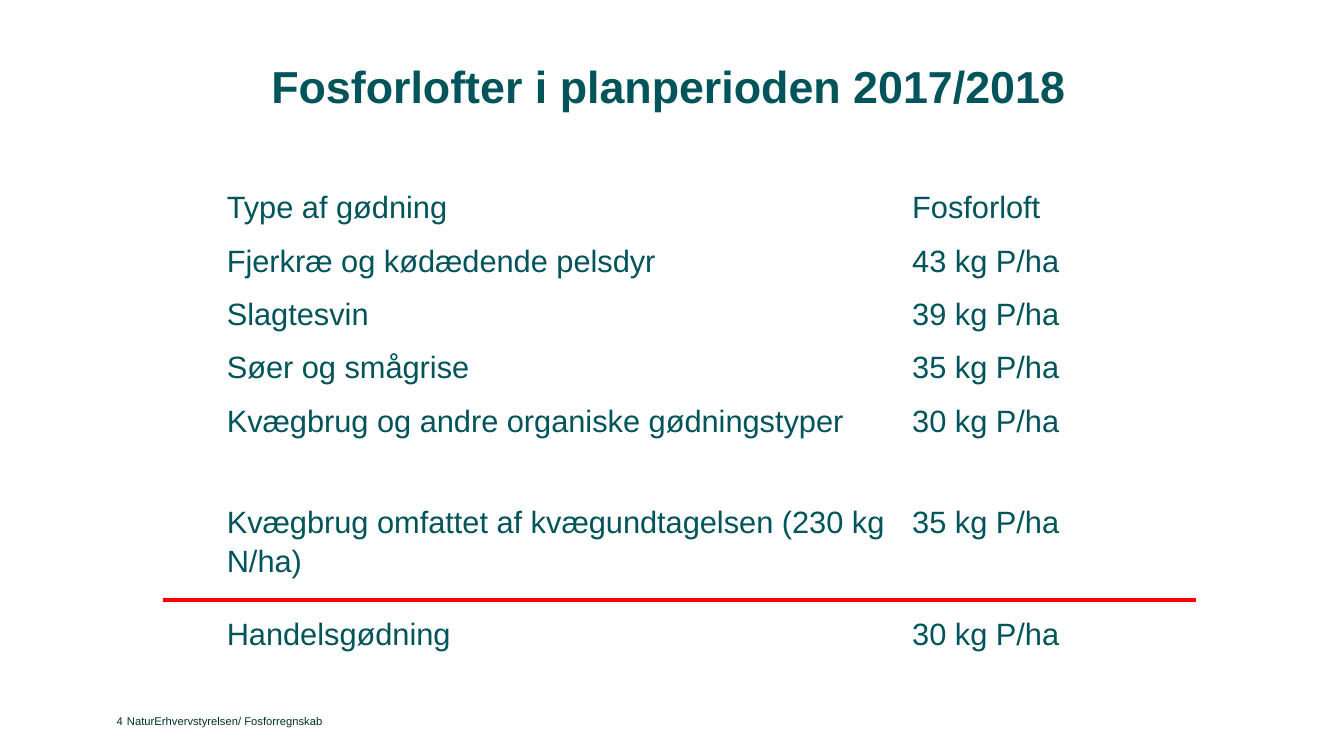
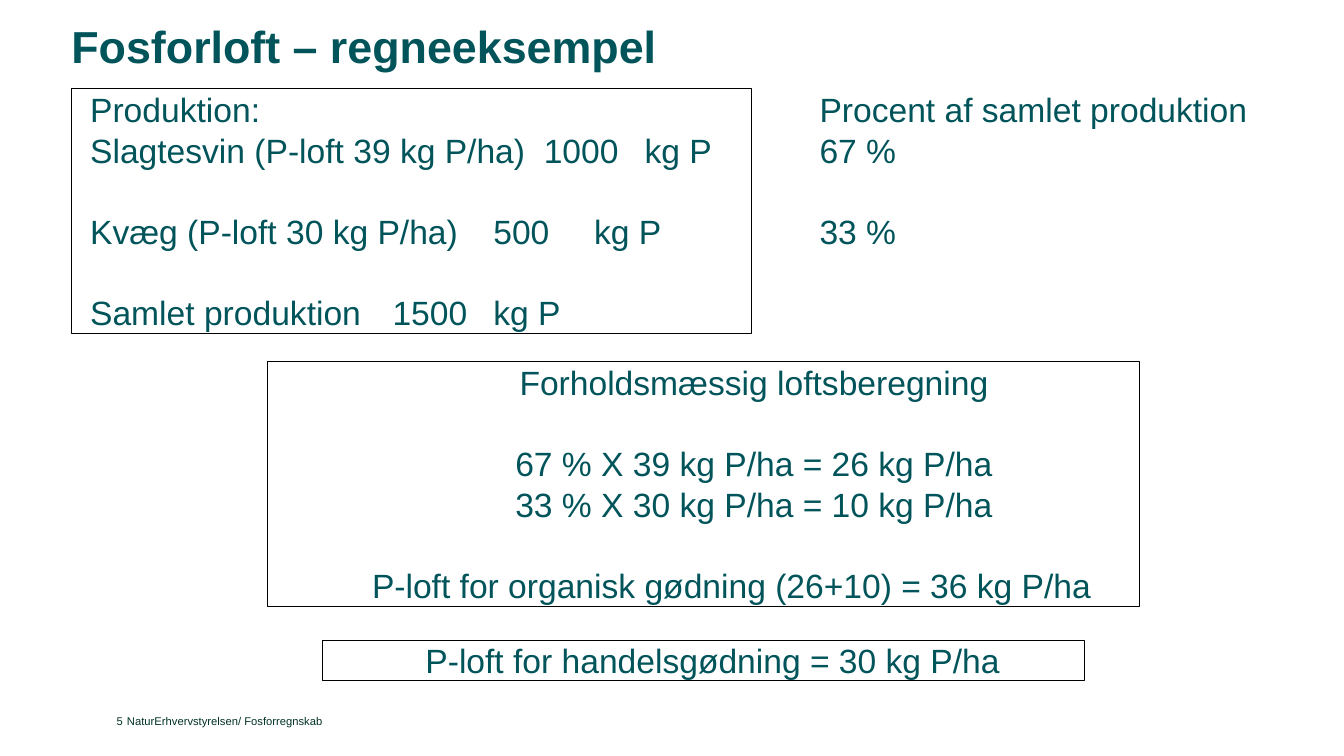
"""Build two slides on phosphorus ceilings: a table and a worked example."""
from lxml.etree import SubElement
from pptx import Presentation
from pptx.dml.color import RGBColor
from pptx.enum.shapes import MSO_CONNECTOR, MSO_SHAPE
from pptx.enum.text import MSO_ANCHOR, PP_ALIGN
from pptx.oxml.ns import qn
from pptx.util import Pt

HUES = {"teal": "00545A", "foot": "003127", "red": "FF0000",
        "black": "000000", "white": "FFFFFF"}
FONT = "Arial"
FOOT = "NaturErhvervstyrelsen/ Fosforregnskab"
LINE = 29

ROWS = [
    ("Type af gødning", "Fosforloft"),
    ("Fjerkræ og kødædende pelsdyr", "43 kg P/ha"),
    ("Slagtesvin", "39 kg P/ha"),
    ("Søer og smågrise", "35 kg P/ha"),
    ("Kvægbrug og andre organiske gødningstyper", "30 kg P/ha"),
    ("Kvægbrug omfattet af kvægundtagelsen (230 kg N/ha)", "35 kg P/ha"),
    ("Handelsgødning", "30 kg P/ha"),
]
COLS = (489.6, 139.7)
HIGH = (38.2, 38.2, 38.2, 38.2, 38.2, 72, 80, 38.2)

MADE = [
    {"text": "Produktion:"},
    {"text": "Slagtesvin (P-loft 39 kg P/ha)\t1000\tkg P"},
    {"text": "Kvæg (P-loft 30 kg P/ha)\t500\tkg P", "gap": LINE},
    {"text": "Samlet produktion\t1500\tkg P", "gap": LINE},
]
SHARE = [
    {"text": "Procent af samlet produktion"},
    {"text": "67 %"},
    {"text": "33 %", "gap": LINE},
]
CALC = [
    {"text": "Forholdsmæssig loftsberegning", "dent": 72},
    {"text": "67 % X 39 kg P/ha = 26 kg P/ha", "dent": 72, "gap": LINE},
    {"text": "33 % X 30 kg P/ha = 10 kg P/ha", "dent": 72},
    {"text": "P-loft for organisk gødning (26+10) = 36 kg P/ha",
     "dent": 40, "gap": LINE},
]
TRADE = [{"text": "P-loft for handelsgødning = 30 kg P/ha", "dent": 13}]

BOXES = [
    (MADE, (51, 63.5, 486, 174.5),
     {"edge": "black", "inset": 13.4, "tabs": ((400.3, "r"), (419.5, "l"))}),
    (SHARE, (585.4, 63.5, 323.5, 116.5), {}),
    (CALC, (190.8, 258.5, 623.5, 174.5),
     {"edge": "black", "align": PP_ALIGN.CENTER}),
    (TRADE, (230.4, 457.2, 544.3, LINE),
     {"edge": "black", "align": PP_ALIGN.CENTER}),
]


def tint(name):
    return RGBColor.from_string(HUES[name])


def write(frame, lines, size=24, hue="teal", bold=False, align=PP_ALIGN.LEFT,
          space=1.0, tabs=()):
    if isinstance(lines, str):
        lines = [{"text": lines}]
    for i, line in enumerate(lines):
        para = frame.add_paragraph() if i else frame.paragraphs[0]
        para.alignment = align
        para.line_spacing = space
        para.space_before = Pt(line.get("gap", 0))
        props = para._p.get_or_add_pPr()
        props.set("marL", str(Pt(line.get("dent", 0))))
        props.set("indent", "0")
        if tabs:
            stops = SubElement(props, qn("a:tabLst"))
            for pos, side in tabs:
                SubElement(stops, qn("a:tab"), pos=str(Pt(pos)), algn=side)
        run = para.add_run()
        run.text = line["text"]
        font = run.font
        font.name, font.size, font.bold = FONT, Pt(size), bold
        font.color.rgb = tint(hue)


def place(slide, lines, spot, edge=None, inset=0, anchor=MSO_ANCHOR.TOP,
          **form):
    area = [Pt(n) for n in spot]
    if edge:
        shape = slide.shapes.add_shape(MSO_SHAPE.RECTANGLE, *area)
        shape.shadow.inherit = False
        shape.fill.background()
        shape.line.color.rgb = tint(edge)
        shape.line.width = Pt(0.75)
    else:
        shape = slide.shapes.add_textbox(*area)
    frame = shape.text_frame
    frame.word_wrap = True
    frame.vertical_anchor = anchor
    frame.margin_left = Pt(inset)
    frame.margin_top = frame.margin_right = frame.margin_bottom = 0
    write(frame, lines, **form)


def start(deck, title, spot, page, align=PP_ALIGN.LEFT):
    slide = deck.slides.add_slide(deck.slide_layouts[6])
    place(slide, title, spot, size=32, bold=True, space=0.9, align=align)
    small = {"size": 8, "hue": "foot", "anchor": MSO_ANCHOR.BOTTOM}
    place(slide, FOOT, (90.7, 504, 445, 15.8), **small)
    place(slide, str(page), (64, 504, 23.8, 15.8), align=PP_ALIGN.RIGHT,
          **small)
    return slide


def grid(slide):
    table = slide.shapes.add_table(
        len(HIGH), len(COLS), Pt(157), Pt(94.3), Pt(sum(COLS)),
        Pt(sum(HIGH))).table
    table.first_row = table.horz_banding = False
    for col, width in zip(table.columns, COLS):
        col.width = Pt(width)
    for row, height in zip(table.rows, HIGH):
        row.height = Pt(height)
    for cell in table.iter_cells():
        cell.fill.solid()
        cell.fill.fore_color.rgb = tint("white")
        cell.margin_left = cell.margin_right = Pt(5)
        cell.margin_top = cell.margin_bottom = 0
    table.cell(0, 0).merge(table.cell(0, 1))
    for r, row in enumerate(ROWS, 1):
        for c, text in enumerate(row):
            write(table.cell(r, c).text_frame, text, size=22, space=1.15)


def rule(slide, left, right, top):
    line = slide.shapes.add_connector(
        MSO_CONNECTOR.STRAIGHT, Pt(left), Pt(top), Pt(right), Pt(top))
    line.line.color.rgb = tint("red")
    line.line.width = Pt(3)
    SubElement(line._element.spPr, qn("a:effectLst"))


def main():
    deck = Presentation()
    deck.slide_width, deck.slide_height = Pt(960), Pt(540)
    slide = start(deck, "Fosforlofter i planperioden 2017/2018",
                  (49, 46, 857.5, 36.7), 4, PP_ALIGN.CENTER)
    grid(slide)
    rule(slide, 116.6, 854, 428.4)
    slide = start(deck, "Fosforloft – regneeksempel",
                  (51, 18, 857.5, 36.7), 5)
    for lines, spot, form in BOXES:
        place(slide, lines, spot, space=Pt(LINE), **form)
    deck.save("out.pptx")


if __name__ == "__main__":
    main()
